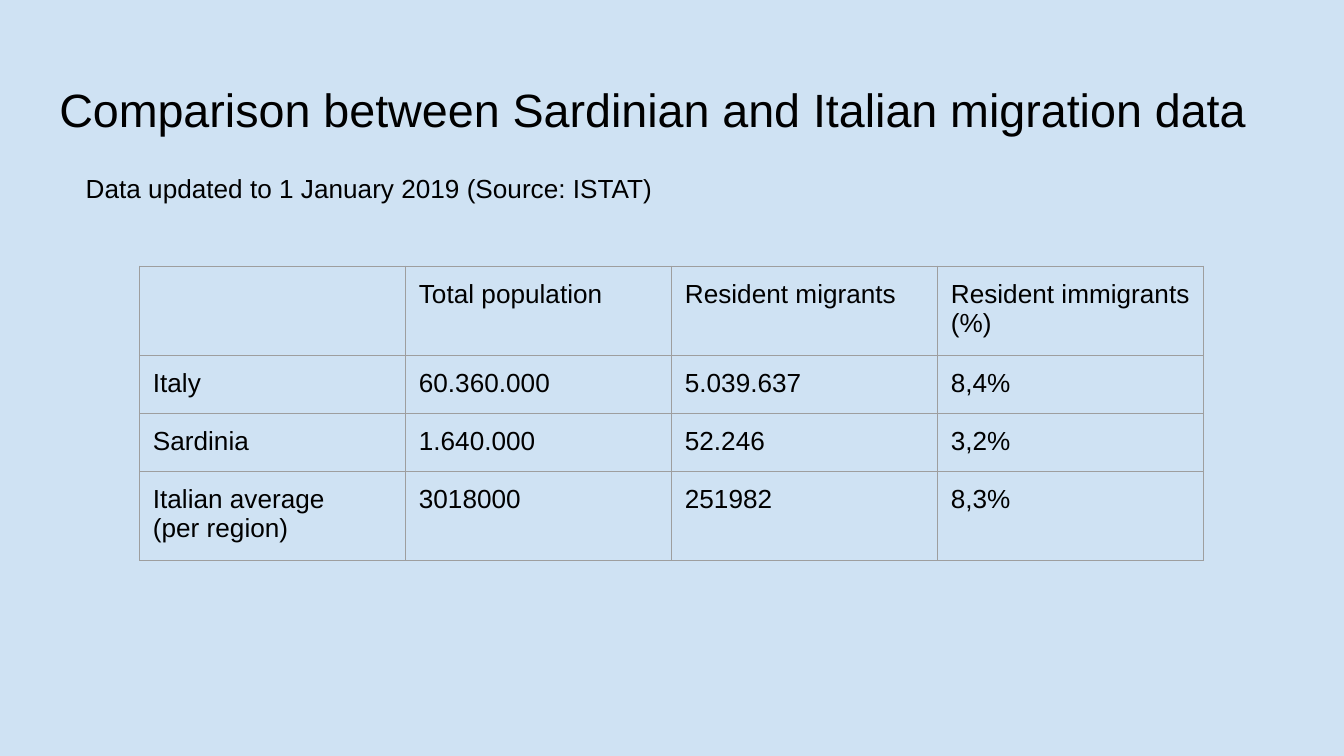
from lxml import etree
from pptx import Presentation, util as u
from pptx.dml.color import RGBColor
from pptx.enum import text
from pptx.oxml import ns

INSET = u.Cm(0.25)
HEADING = "Comparison between Sardinian and Italian migration data"
SUBTITLE = "Data updated to 1 January 2019 (Source: ISTAT)"
MIGRATION = [
    ["", "Total population", "Resident migrants", "Resident immigrants (%)"],
    ["Italy", "60.360.000", "5.039.637", "8,4%"],
    ["Sardinia", "1.640.000", "52.246", "3,2%"],
    ["Italian average\n(per region)", "3018000", "251982", "8,3%"],
]


def paint(target, colour):
    """Give a fill a solid hex colour."""
    target.solid()
    target.fore_color.rgb = RGBColor.from_string(colour)


def set_margins(holder):
    """Set equal margins on a text frame or table cell."""
    holder.margin_left = holder.margin_right = INSET
    holder.margin_top = holder.margin_bottom = INSET


def write(frame, content, size):
    """Fill a text frame with left-aligned black Arial text."""
    frame.text = content
    frame.word_wrap = True
    for para in frame.paragraphs:
        para.alignment = text.PP_ALIGN.LEFT
        para.font.name = "Arial"
        para.font.size = u.Pt(size)
        paint(para.font.fill, "000000")


def add_borders(cell, colour, width):
    """Draw a solid line on all four sides of a cell."""
    properties = cell._tc.get_or_add_tcPr()
    for index, side in enumerate(("lnL", "lnR", "lnT", "lnB")):
        line = etree.Element(ns.qn(f"a:{side}"), w=str(u.Pt(width)))
        fill = etree.SubElement(line, ns.qn("a:solidFill"))
        etree.SubElement(fill, ns.qn("a:srgbClr"), val=colour)
        properties.insert(index, line)


def place_title(page, left, top, width, height):
    """Place the heading in the title placeholder."""
    title = page.shapes.title
    title.left, title.top, title.width, title.height = left, top, width, height
    frame = title.text_frame
    set_margins(frame)
    write(frame, HEADING, 25)
    frame.auto_size = text.MSO_AUTO_SIZE.NONE
    frame.vertical_anchor = text.MSO_ANCHOR.BOTTOM


def place_subtitle(page, left, top, width, height):
    """Place the line that names the date and source."""
    frame = page.shapes.add_textbox(left, top, width, height).text_frame
    set_margins(frame)
    write(frame, SUBTITLE, 14)
    frame.auto_size = text.MSO_AUTO_SIZE.SHAPE_TO_FIT_TEXT


def place_table(page, left, top, width, height):
    """Place the migration table with equal rows and columns."""
    shape = page.shapes.add_table(len(MIGRATION), len(MIGRATION[0]), left, top, width, height)
    table = shape.table
    table.first_row = table.horz_banding = False
    for row, values in enumerate(MIGRATION):
        for column, value in enumerate(values):
            cell = table.cell(row, column)
            set_margins(cell)
            write(cell.text_frame, value, 14)
            cell.fill.background()
            add_borders(cell, "9E9E9E", 0.75)


def main():
    """Build and save the deck."""
    deck = Presentation()
    deck.slide_width, deck.slide_height = u.Cm(25.4), u.Cm(14.29)
    page = deck.slides.add_slide(deck.slide_layouts[5])
    paint(page.background.fill, "CFE2F3")
    place_title(page, u.Cm(0.87), u.Cm(1.24), u.Cm(23.67), u.Cm(1.6))
    place_subtitle(page, u.Cm(1.37), u.Cm(3), u.Cm(15.77), u.Cm(1.07))
    place_table(page, u.Cm(2.64), u.Cm(5.03), u.Cm(20.11), u.Cm(4.24))
    deck.save("out.pptx")


if __name__ == "__main__":
    main()
